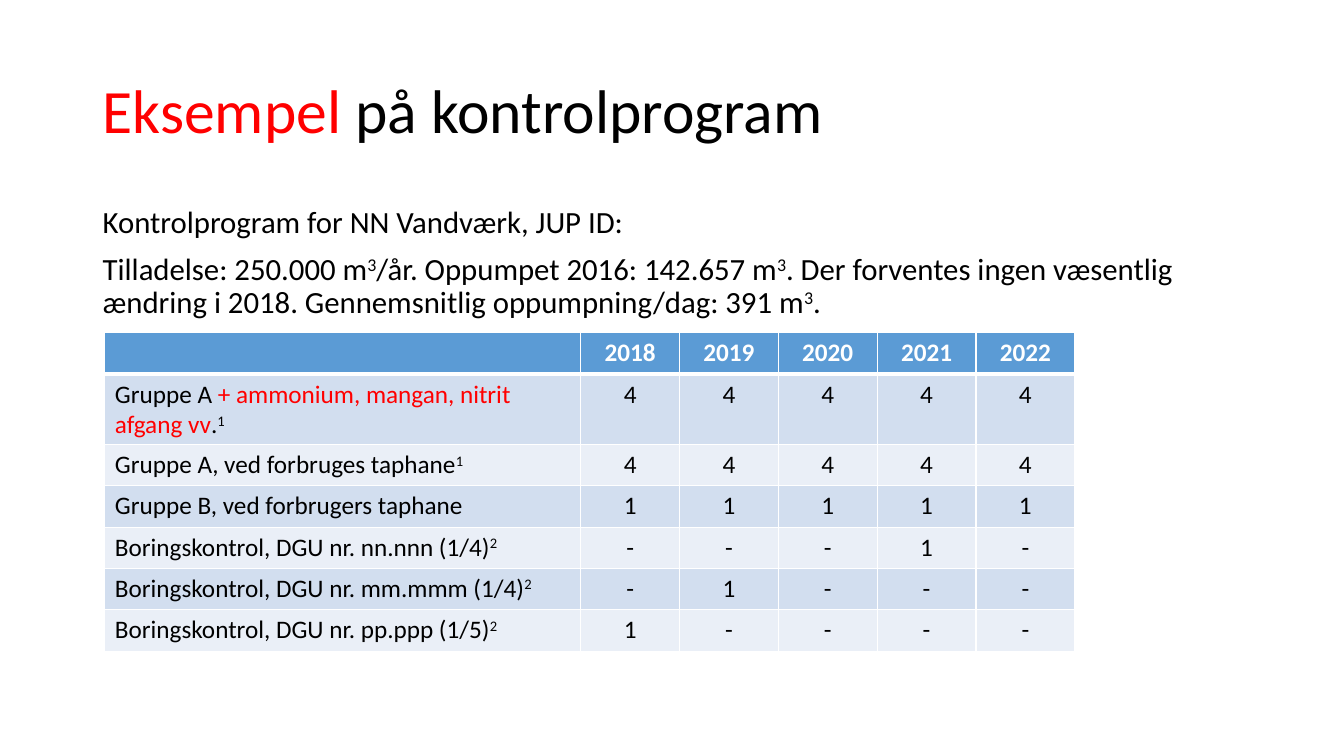
import pptx
import pptx.dml.color
import pptx.enum.text
import pptx.oxml.ns
import pptx.util
from lxml import etree

Inches = pptx.util.Inches
Pt = pptx.util.Pt
RGBColor = pptx.dml.color.RGBColor
ANCHOR = pptx.enum.text.MSO_ANCHOR
ALIGN = pptx.enum.text.PP_ALIGN
qn = pptx.oxml.ns.qn

BLACK = RGBColor(0x00, 0x00, 0x00)
WHITE = RGBColor(0xFF, 0xFF, 0xFF)
RED = RGBColor(0xFF, 0x00, 0x00)
HEADER_BLUE = RGBColor(0x5B, 0x9B, 0xD5)
BAND_DARK = RGBColor(0xD2, 0xDE, 0xEF)
BAND_LIGHT = RGBColor(0xEA, 0xEF, 0xF7)

SUP = {"superscript": True}
ACCENT = {"color": RED}

TITLE = [("Eksempel ", ACCENT), "på kontrolprogram"]
BODY = [
    ["Kontrolprogram for NN Vandværk, JUP ID:"],
    ["Tilladelse: 250.000 m", ("3", SUP), "/år. Oppumpet 2016: 142.657 m", ("3", SUP),
     ". Der forventes ingen væsentlig ændring i 2018. Gennemsnitlig oppumpning/dag: 391 m",
     ("3", SUP), "."],
]
YEARS = ["2018", "2019", "2020", "2021", "2022"]
# One row per control: label runs, then one value per year
CONTROLS = [
    (["Gruppe A ", ("+ ammonium, mangan, nitrit afgang vv", ACCENT), ".", ("1", SUP)], "44444"),
    (["Gruppe A, ved forbruges taphane", ("1", SUP)], "44444"),
    (["Gruppe B, ved forbrugers taphane"], "11111"),
    (["Boringskontrol, DGU nr. nn.nnn (1/4)", ("2", SUP)], "---1-"),
    (["Boringskontrol, DGU nr. mm.mmm (1/4)", ("2", SUP)], "-1---"),
    (["Boringskontrol, DGU nr. pp.ppp (1/5)", ("2", SUP)], "1----"),
]


def add_run(p, text, size, font, color=BLACK, bold=False, superscript=False):
    r = p.add_run()
    r.text = text
    r.font.name = font
    r.font.size = Pt(size)
    r.font.bold = bold
    r.font.color.rgb = color
    if superscript:
        r.font._element.set("baseline", "30000")


class SlideBuilder:
    font = "Calibri"
    title_size = 44
    body_size = 22
    table_size = 18

    def __init__(self, slide):
        self.slide = slide

    def fill_paragraph(self, p, runs, **style):
        """Add runs, each a string or a (string, format) pair that overrides style."""
        for run in runs:
            text, extra = (run, {}) if isinstance(run, str) else run
            add_run(p, text, **{"font": self.font, **style, **extra})

    def text(self, box, paragraphs, size, anchor=ANCHOR.TOP, space_before=0):
        tf = self.slide.shapes.add_textbox(*map(Inches, box)).text_frame
        tf.word_wrap = True
        tf.vertical_anchor = anchor
        for i, runs in enumerate(paragraphs):
            p = tf.add_paragraph() if i else tf.paragraphs[0]
            p.line_spacing = 0.9
            p.space_before = Pt(space_before)
            self.fill_paragraph(p, runs, size=size)

    def borders(self, cell, **widths):
        """Draw white borders; widths are points keyed by side: L, R, T, B."""
        tcPr = cell._tc.get_or_add_tcPr()
        for side, width in widths.items():
            ln = etree.SubElement(tcPr, qn("a:ln" + side), w=str(Pt(width)))
            solid = etree.SubElement(ln, qn("a:solidFill"))
            etree.SubElement(solid, qn("a:srgbClr"), val=str(WHITE))

    def table(self, left, top, col_widths, row_height, rows):
        frame = self.slide.shapes.add_table(
            len(rows), len(col_widths), Inches(left), Inches(top),
            Inches(sum(col_widths)), Inches(row_height * len(rows)))
        table = frame.table
        for column, width in zip(table.columns, col_widths):
            column.width = Inches(width)
        for i, row in enumerate(rows):
            table.rows[i].height = Inches(row_height)
            header = i == 0
            fill = HEADER_BLUE if header else BAND_DARK if i % 2 else BAND_LIGHT
            for j, runs in enumerate(row):
                cell = table.cell(i, j)
                self.borders(cell, L=1, R=1, T=3 if i == 1 else 1, B=3 if header else 1)
                cell.fill.solid()
                cell.fill.fore_color.rgb = fill
                p = cell.text_frame.paragraphs[0]
                p.alignment = ALIGN.CENTER if j else ALIGN.LEFT
                self.fill_paragraph(p, runs, size=self.table_size, bold=header,
                                    color=WHITE if header else BLACK)


def main():
    prs = pptx.Presentation()
    prs.slide_width, prs.slide_height = Inches(13.33), Inches(7.5)
    s = SlideBuilder(prs.slides.add_slide(prs.slide_layouts[6]))
    s.text((0.92, 0.4, 11.5, 1.45), [TITLE], s.title_size, anchor=ANCHOR.MIDDLE)
    s.text((0.92, 2, 11.5, 4.76), BODY, s.body_size, space_before=10)
    header = [[]] + [[year] for year in YEARS]
    rows = [header] + [[label] + [[v] for v in values] for label, values in CONTROLS]
    s.table(1.04, 3.3, [4.72] + [0.98] * len(YEARS), 0.41, rows)
    prs.save("out.pptx")


if __name__ == "__main__":
    main()
